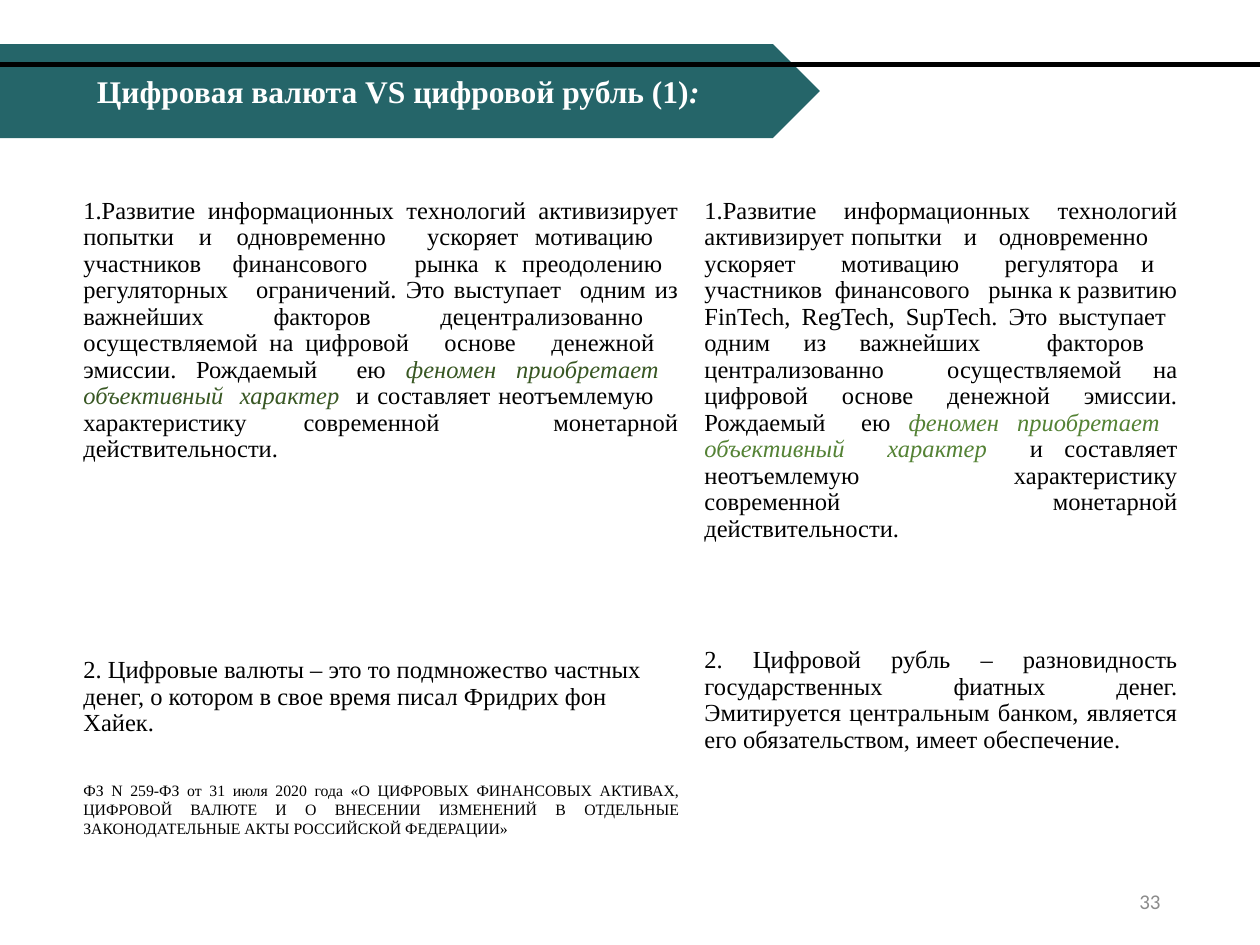
"""Build a slide comparing digital currency with the digital rouble."""
from pptx import Presentation
from pptx.dml.color import RGBColor
from pptx.enum.shapes import MSO_SHAPE
from pptx.enum.text import MSO_ANCHOR, PP_ALIGN
from pptx.util import Pt

PX = 914400 / 126
SERIF = "Times New Roman"
BLACK, WHITE, TEAL, GREY = "000000", "FFFFFF", "256569", "8C8C8C"
DARK_GREEN, GREEN = "385723", "548235"
LEFT, CENTER, RIGHT, JUSTIFY = PP_ALIGN.LEFT, PP_ALIGN.CENTER, PP_ALIGN.RIGHT, PP_ALIGN.JUSTIFY

TITLE = [("Цифровая валюта VS цифровой рубль (1)", None), (":", WHITE)]

# Each paragraph: spans of (text, accent colour), alignment, size, line spacing, space before
CURRENCY = [
    ([("1.Развитие информационных технологий активизирует попытки   и   одновременно     "
       "ускоряет  мотивацию    участников  финансового   рынка к преодолению  регуляторных   "
       "ограничений. Это выступает  одним из важнейших  факторов  децентрализованно  "
       "осуществляемой на цифровой   основе   денежной   эмиссии. Рождаемый  ею ", None),
      ("феномен приобретает  объективный  характер", DARK_GREEN),
      ("  и составляет неотъемлемую    характеристику современной  монетарной "
       "действительности. ", None)], JUSTIFY, 14, 0.9, 0),
    ([("2. Цифровые валюты – это то подмножество частных денег, о котором в свое время "
       "писал Фридрих фон Хайек.", None)], LEFT, 14, 0.9, 111),
    ([("ФЗ N 259-ФЗ от 31 июля 2020 года «О ЦИФРОВЫХ ФИНАНСОВЫХ АКТИВАХ, ЦИФРОВОЙ ВАЛЮТЕ "
       "И О ВНЕСЕНИИ ИЗМЕНЕНИЙ В ОТДЕЛЬНЫЕ ЗАКОНОДАТЕЛЬНЫЕ АКТЫ РОССИЙСКОЙ ФЕДЕРАЦИИ»",
       None)], JUSTIFY, 9, 1.0, 25),
]
ROUBLE = [
    ([("1.Развитие информационных технологий активизирует попытки   и   одновременно     "
       "ускоряет  мотивацию  регулятора и  участников  финансового   рынка к развитию "
       "FinTech, RegTech, SupTech. Это выступает  одним из важнейших  факторов  "
       "централизованно  осуществляемой на цифровой   основе   денежной   эмиссии. "
       "Рождаемый  ею ", None),
      ("феномен приобретает  объективный  характер  ", GREEN),
      ("и составляет неотъемлемую    характеристику современной  монетарной "
       "действительности. ", None)], JUSTIFY, 14, 0.9, 0),
    ([("2. Цифровой рубль – разновидность государственных фиатных денег. Эмитируется "
       "центральным банком, является его обязательством, имеет обеспечение.", None)],
     JUSTIFY, 14, 0.9, 60),
]
COLUMNS = [(71, 620, CURRENCY), (692, 498, ROUBLE)]
COLUMN_TOP, COLUMN_HEIGHT = 192, 684


def rgb(value):
    return RGBColor.from_string(value)


def place(*lengths):
    return [round(length * PX) for length in lengths]


def write(paragraph, spans, align, size, color, font=SERIF, bold=False):
    for text, accent in spans:
        span = paragraph.add_run()
        span.text = text
        if accent:
            span.font.italic = True
            span.font.color.rgb = rgb(accent)
    paragraph.alignment = align
    paragraph.font.name = font
    paragraph.font.size = Pt(size)
    paragraph.font.bold = bold
    paragraph.font.color.rgb = rgb(color)


def add_column(page, left, width, content):
    frame = page.shapes.add_textbox(*place(left, COLUMN_TOP, width, COLUMN_HEIGHT)).text_frame
    frame.word_wrap = True
    for index, (spans, align, size, spacing, before) in enumerate(content):
        paragraph = frame.add_paragraph() if index else frame.paragraphs[0]
        write(paragraph, spans, align, size, BLACK)
        paragraph.line_spacing = spacing
        paragraph.space_before = Pt(before)


def add_block(page, kind, bounds, color):
    block = page.shapes.add_shape(kind, *place(*bounds))
    block.shadow.inherit = False
    block.fill.solid()
    block.fill.fore_color.rgb = rgb(color)
    block.line.fill.background()
    return block


def main():
    deck = Presentation()
    deck.slide_width, deck.slide_height = place(1260, 945)
    page = deck.slides.add_slide(deck.slide_layouts[6])

    for left, width, content in COLUMNS:
        add_column(page, left, width, content)

    number = page.shapes.add_textbox(*place(890, 876, 283, 50)).text_frame
    number.word_wrap = True
    number.vertical_anchor = MSO_ANCHOR.MIDDLE
    write(number.paragraphs[0], [("33", None)], RIGHT, 12, GREY, "Calibri")

    banner = add_block(page, MSO_SHAPE.PENTAGON, (0, 44, 820, 94), TEAL).text_frame
    banner.word_wrap = True
    banner.vertical_anchor = MSO_ANCHOR.MIDDLE
    write(banner.paragraphs[0], TITLE, CENTER, 18, WHITE, bold=True)

    rule = add_block(page, MSO_SHAPE.RECTANGLE, (0, 63, 1260, 3), BLACK)
    rule.line.color.rgb = rgb(BLACK)
    rule.line.width = Pt(0.75)

    deck.save("out.pptx")


if __name__ == "__main__":
    main()
